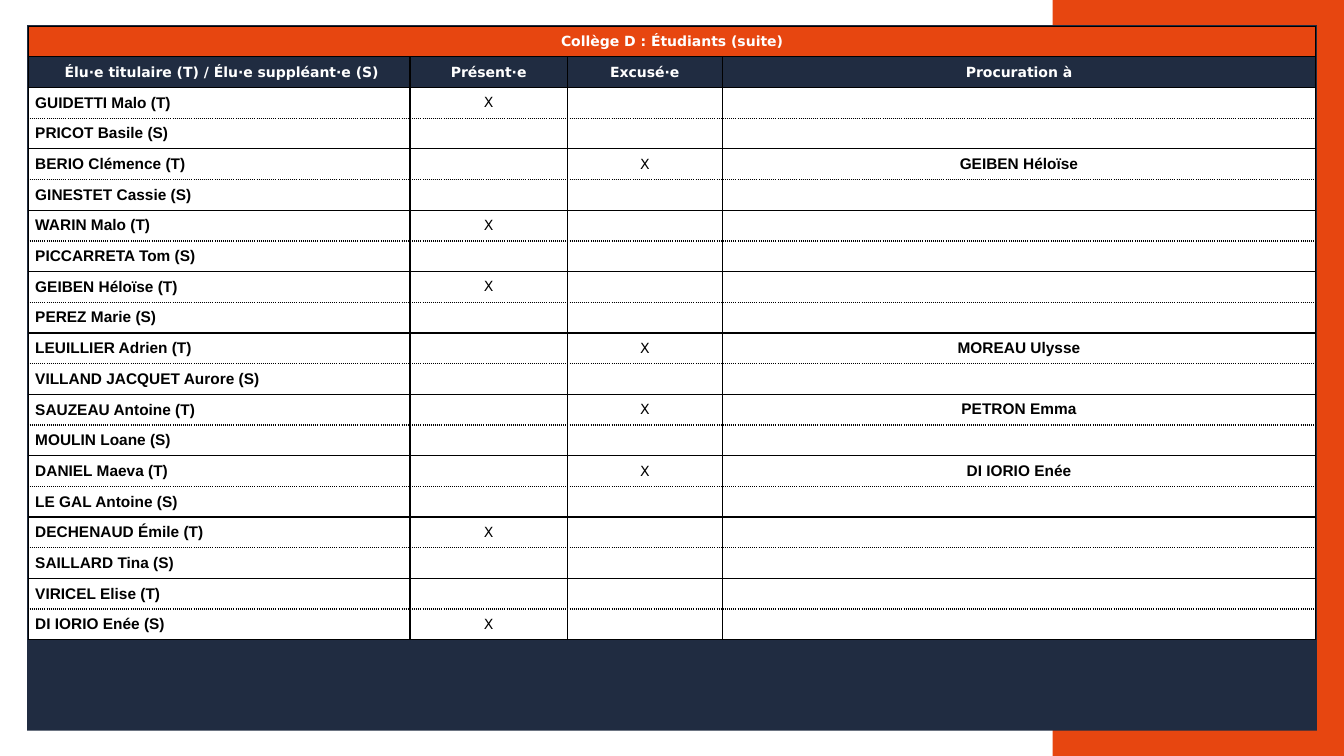
from dataclasses import dataclass

from lxml import etree
from pptx import Presentation
from pptx.dml.color import RGBColor
from pptx.enum import shapes, text
from pptx.oxml.ns import qn
from pptx.util import Inches, Pt


@dataclass(frozen=True)
class Theme:
    orange: str = "E74610"
    navy: str = "202C41"
    white: str = "FFFFFF"
    black: str = "000000"
    heading_font: str = "DejaVu Sans"
    name_font: str = "Arial"
    heading_size: int = 10
    name_size: int = 11
    line_spacing: int = 12
    border_width: int = 1


THEME = Theme()
TITLE = "Collège D : Étudiants (suite)"
HEADINGS = [" Élu·e titulaire (T) / Élu·e suppléant·e (S)",
            "Présent·e", "Excusé·e", "Procuration à"]
COLUMN_WIDTHS = [3.79, 1.56, 1.54, 5.89]
MEMBERS = [
    ("GUIDETTI Malo (T)", "X", "", ""),
    ("PRICOT Basile (S)", "", "", ""),
    ("BERIO Clémence (T)", "", "X", "GEIBEN Héloïse"),
    ("GINESTET Cassie (S)", "", "", ""),
    ("WARIN Malo (T)", "X", "", ""),
    ("PICCARRETA Tom (S)", "", "", ""),
    ("GEIBEN Héloïse (T)", "X", "", ""),
    ("PEREZ Marie (S)", "", "", ""),
    ("LEUILLIER Adrien (T)", "", "X", "MOREAU Ulysse"),
    ("VILLAND JACQUET Aurore (S)", "", "", ""),
    ("SAUZEAU Antoine (T)", "", "X", "PETRON Emma"),
    ("MOULIN Loane (S)", "", "", ""),
    ("DANIEL Maeva (T)", "", "X", "DI IORIO Enée"),
    ("LE GAL Antoine (S)", "", "", ""),
    ("DECHENAUD Émile (T)", "X", "", ""),
    ("SAILLARD Tina (S)", "", "", ""),
    ("VIRICEL Elise (T)", "", "", ""),
    ("DI IORIO Enée (S)", "X", "", ""),
]


def add_panel(slide, left, top, width, height, color):
    panel = slide.shapes.add_shape(
        shapes.MSO_SHAPE.RECTANGLE,
        Inches(left), Inches(top), Inches(width), Inches(height))
    panel.shadow.inherit = False
    panel.fill.solid()
    panel.fill.fore_color.rgb = RGBColor.from_string(color)
    panel.line.fill.background()


def set_borders(cell, dotted_sides=""):
    """Draw all four sides; those named in dotted_sides (L, R, T, B) are dotted."""
    properties = cell._tc.get_or_add_tcPr()
    for index, side in enumerate("LRTB"):
        line = etree.Element(qn(f"a:ln{side}"), w=str(Pt(THEME.border_width)))
        fill = etree.SubElement(line, qn("a:solidFill"))
        etree.SubElement(fill, qn("a:srgbClr"), val=THEME.black)
        dash = "sysDot" if side in dotted_sides else "solid"
        etree.SubElement(line, qn("a:prstDash"), val=dash)
        properties.insert(index, line)


def write_cell(cell, words, *, font=THEME.heading_font, size=THEME.heading_size,
               bold=True, color=THEME.black, fill=THEME.white, centered=True):
    cell.fill.solid()
    cell.fill.fore_color.rgb = RGBColor.from_string(fill)
    cell.margin_left = cell.margin_right = Inches(0.07)
    cell.margin_top = cell.margin_bottom = 0
    cell.vertical_anchor = text.MSO_ANCHOR.MIDDLE
    paragraph = cell.text_frame.paragraphs[0]
    if not words:
        etree.SubElement(paragraph._p, qn("a:endParaRPr"), sz=str(size * 100))
        return
    if centered:
        paragraph.alignment = text.PP_ALIGN.CENTER
        paragraph.line_spacing = Pt(THEME.line_spacing)
    run = paragraph.add_run()
    run.text = words
    run.font.name = font
    run.font.size = Pt(size)
    run.font.bold = bold
    run.font.color.rgb = RGBColor.from_string(color)


def add_attendance_table(slide, left, top, width, height):
    row_count = len(MEMBERS) + 2
    table = slide.shapes.add_table(
        row_count, len(HEADINGS),
        Inches(left), Inches(top), Inches(width), Inches(height)).table
    table.first_row = table.horz_banding = False
    for column, share in zip(table.columns, COLUMN_WIDTHS):
        column.width = int(Inches(width) * share / sum(COLUMN_WIDTHS))
    for row in table.rows:
        row.height = Inches(height) // row_count

    table.cell(0, 0).merge(table.cell(0, len(HEADINGS) - 1))
    write_cell(table.cell(0, 0), TITLE, color=THEME.white, fill=THEME.orange)
    for cell in table.rows[0].cells:
        set_borders(cell)
    for cell, heading in zip(table.rows[1].cells, HEADINGS):
        write_cell(cell, heading, color=THEME.white, fill=THEME.navy)
        set_borders(cell)

    name_style = {"font": THEME.name_font, "size": THEME.name_size}
    mark_style = {"bold": False}
    styles = [{**name_style, "centered": False}, mark_style, mark_style, name_style]
    for index, member in enumerate(MEMBERS):
        for cell, words, style in zip(table.rows[index + 2].cells, member, styles):
            write_cell(cell, words, **style)
            set_borders(cell, dotted_sides="T" if index % 2 else "B")


def main():
    presentation = Presentation()
    presentation.slide_width = Inches(13.33)
    presentation.slide_height = Inches(7.5)
    slide = presentation.slides.add_slide(presentation.slide_layouts[6])
    add_panel(slide, 10.44, 0, 2.89, 7.5, THEME.orange)
    add_panel(slide, 0.27, 0.25, 12.79, 7, THEME.navy)
    add_attendance_table(slide, 0.28, 0.26, 12.77, 6.09)
    presentation.save("out.pptx")


if __name__ == "__main__":
    main()
